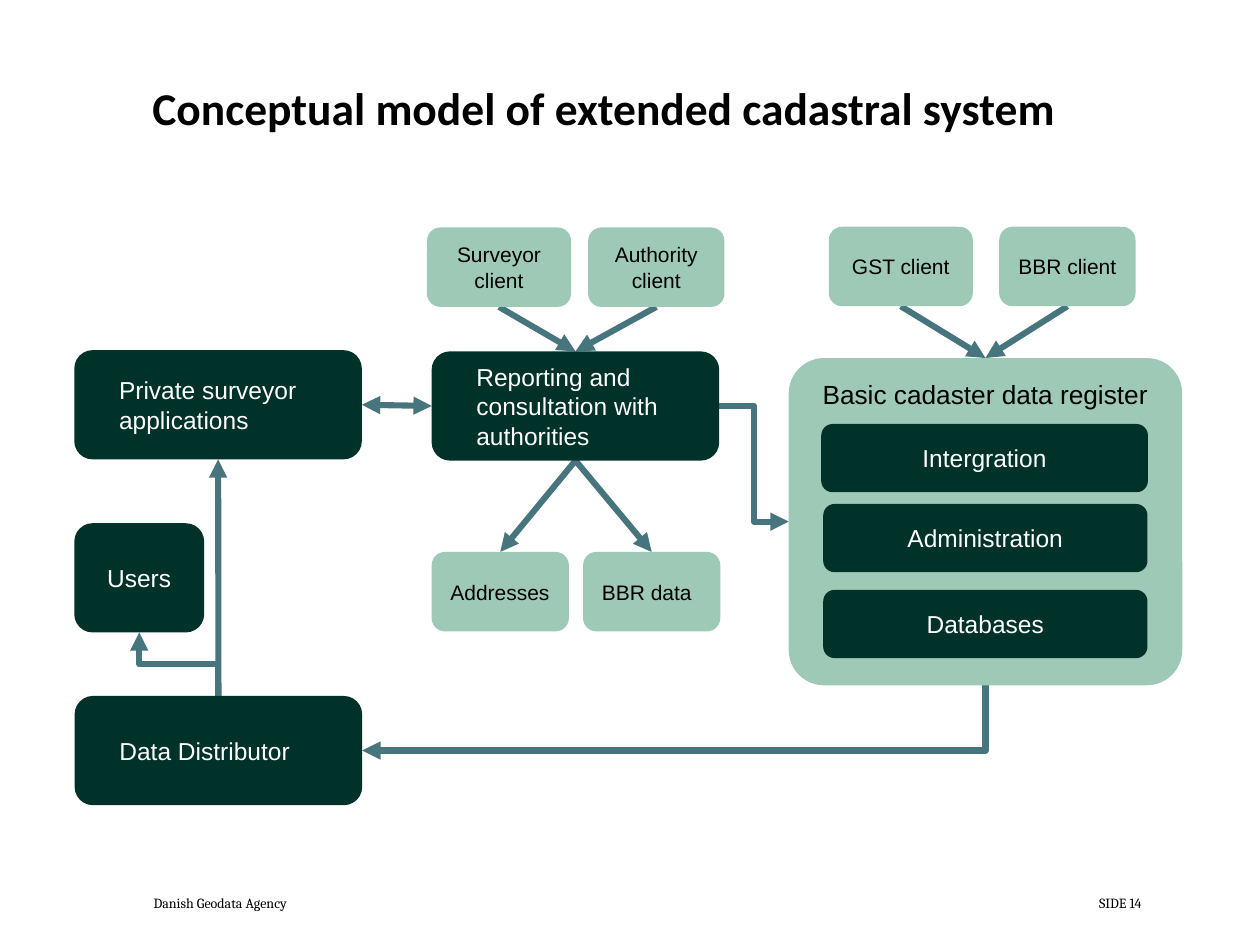
import pptx
import pptx.util
import pptx.dml.color
import pptx.enum.shapes
import pptx.enum.text
import pptx.oxml.ns
from lxml import etree

Pt = pptx.util.Pt
RGB = pptx.dml.color.RGBColor
SHAPE = pptx.enum.shapes.MSO_SHAPE
LINE = pptx.enum.shapes.MSO_CONNECTOR
ALIGN = pptx.enum.text.PP_ALIGN
ANCHOR = pptx.enum.text.MSO_ANCHOR
qn = pptx.oxml.ns.qn

DARK = RGB(0x00, 0x32, 0x29)
LIGHT = RGB(0x9E, 0xC9, 0xB6)
TEAL = RGB(0x47, 0x75, 0x7D)
WHITE = RGB(0xFF, 0xFF, 0xFF)
BLACK = RGB(0x00, 0x00, 0x00)
TOP, LEFT, BOTTOM, RIGHT = range(4)

STYLES = {
    "step": (DARK, WHITE, 14, ALIGN.LEFT, (22.5, 8.5, 0, 8.5)),
    "part": (DARK, WHITE, 14, ALIGN.CENTER, (22.5, 8.5, 22.5, 8.5)),
    "user": (DARK, WHITE, 14, ALIGN.CENTER, (8.5, 8.5, 8.5, 8.5)),
    "client": (LIGHT, BLACK, 12, ALIGN.CENTER, (6, 6, 6, 6)),
    "data": (LIGHT, BLACK, 12, ALIGN.LEFT, (8.5, 6, 6, 6)),
}

LABELS = [
    ("Conceptual model of extended cadastral system", (87.1, 31.7, 564.5, 45.4),
     "Calibri", 26, True, ALIGN.LEFT),
    ("Danish Geodata Agency", (87.8, 503.3, 357, 17.3), "Cambria", 8, False, ALIGN.LEFT),
    ("SIDE 14", (592.6, 503.3, 59.8, 17.3), "Cambria", 8, False, ALIGN.RIGHT),
]
HEAD = ("Basic cadaster data register", (450.7, 212.4, 224.6, 20),
        "Arial", 15, False, ALIGN.CENTER)

BOXES = [
    ("Private surveyor applications", "step", (42.5, 200.1, 164.3, 62.4)),
    ("Reporting and consultation with authorities", "step", (246.7, 200.8, 164.3, 62.4)),
    ("Data Distributor", "step", (42.7, 397.7, 164.3, 62.4)),
    ("Users", "user", (42.5, 299, 74.2, 62.4)),
    ("Addresses", "data", (246.7, 315.4, 78.4, 45.4)),
    ("BBR data", "data", (333.2, 315.4, 78.4, 45.4)),
    ("Surveyor client", "client", (244, 130, 82.3, 45.4)),
    ("Authority client", "client", (336.1, 130, 77.9, 45.4)),
    ("GST client", "client", (473.6, 129.6, 82.3, 45.4)),
    ("BBR client", "client", (571, 129.6, 77.9, 45.4)),
    ("Intergration", "part", (469.3, 242.3, 186.7, 39)),
    ("Administration", "part", (470.4, 288, 185.3, 39)),
    ("Databases", "part", (470.4, 337.1, 185.3, 39)),
]
FRAME = (450.7, 204.6, 224.9, 187)

LINKS = [
    ("GST client", BOTTOM, "Register", TOP, "line", "tail"),
    ("BBR client", BOTTOM, "Register", TOP, "line", "tail"),
    ("Surveyor client", BOTTOM, "Reporting", TOP, "line", "tail"),
    ("Authority client", BOTTOM, "Reporting", TOP, "line", "tail"),
    ("Private", RIGHT, "Reporting", LEFT, "line", "both"),
    ("Reporting", BOTTOM, "Addresses", TOP, "line", "tail"),
    ("Reporting", BOTTOM, "BBR data", TOP, "line", "tail"),
    ("Reporting", RIGHT, "Register", LEFT, "bentConnector3", "tail"),
    ("Data Distributor", RIGHT, "Register", BOTTOM, "bentConnector2", "head"),
    ("Users", BOTTOM, "Data Distributor", TOP, "upright", "head"),
    ("Data Distributor", TOP, "Private", BOTTOM, "line", "tail"),
]
SHORT = {BOXES[0][0]: "Private", BOXES[1][0]: "Reporting"}

deck = pptx.Presentation()
deck.slide_width, deck.slide_height = Pt(720), Pt(540)
slide = deck.slides.add_slide(deck.slide_layouts[6])
shapes = slide.shapes


def write(shape, text, font, size, bold, color, align, anchor, insets):
    frame = shape.text_frame
    frame.word_wrap = True
    frame.vertical_anchor = anchor
    (frame.margin_left, frame.margin_top,
     frame.margin_right, frame.margin_bottom) = map(Pt, insets)
    para = frame.paragraphs[0]
    para.alignment = align
    run = para.add_run()
    run.text = text
    run.font.name, run.font.size, run.font.bold = font, Pt(size), bold
    run.font.color.rgb = color


def label(item, anchor, insets):
    text, place, font, size, bold, align = item
    shape = shapes.add_textbox(*map(Pt, place))
    write(shape, text, font, size, bold, BLACK, align, anchor, insets)


def panel(place, fill, round_by):
    shape = shapes.add_shape(SHAPE.ROUNDED_RECTANGLE, *map(Pt, place))
    shape.adjustments[0] = round_by
    shape.shadow.inherit = False
    shape.fill.solid()
    shape.fill.fore_color.rgb = fill
    shape.line.fill.background()
    return shape


def link(start, side, goal, end, route, heads):
    kind = LINE.STRAIGHT if route == "line" else LINE.ELBOW
    wire = shapes.add_connector(kind, 0, 0, 0, 0)
    wire.begin_connect(nodes[start], side)
    wire.end_connect(nodes[goal], end)
    props = wire._element.spPr
    if route == "bentConnector2":
        props.find(qn("a:prstGeom")).set("prst", route)
    if route == "upright":
        wide, high = wire.width, wire.height
        mid_x, mid_y = wire.left + wide // 2, wire.top + high // 2
        wire.left, wire.top = mid_x - high // 2, mid_y - wide // 2
        wire.width, wire.height = high, wide
        turn = props.find(qn("a:xfrm"))
        turn.attrib.pop("flipV", None)
        turn.set("flipH", "1")
        turn.set("rot", "16200000")
    wire.line.color.rgb = TEAL
    wire.line.width = Pt(3.5)
    for name in ("head", "tail"):
        if heads in (name, "both"):
            tip = etree.SubElement(props.find(qn("a:ln")), qn(f"a:{name}End"))
            tip.set("type", "triangle")
    etree.SubElement(props, qn("a:effectLst"))
    shapes._spTree.insert(2, wire._element)


for item in LABELS:
    label(item, ANCHOR.BOTTOM, (0, 0, 0, 0))

nodes = {"Register": panel(FRAME, LIGHT, 0.108)}
label(HEAD, ANCHOR.TOP, (7.2, 3.6, 7.2, 3.6))
for text, style, place in BOXES:
    fill, color, size, align, insets = STYLES[style]
    box = panel(place, fill, 0.167)
    write(box, text, "Arial", size, False, color, align, ANCHOR.MIDDLE, insets)
    nodes[SHORT.get(text, text)] = box

for item in LINKS:
    link(*item)

deck.save("out.pptx")
